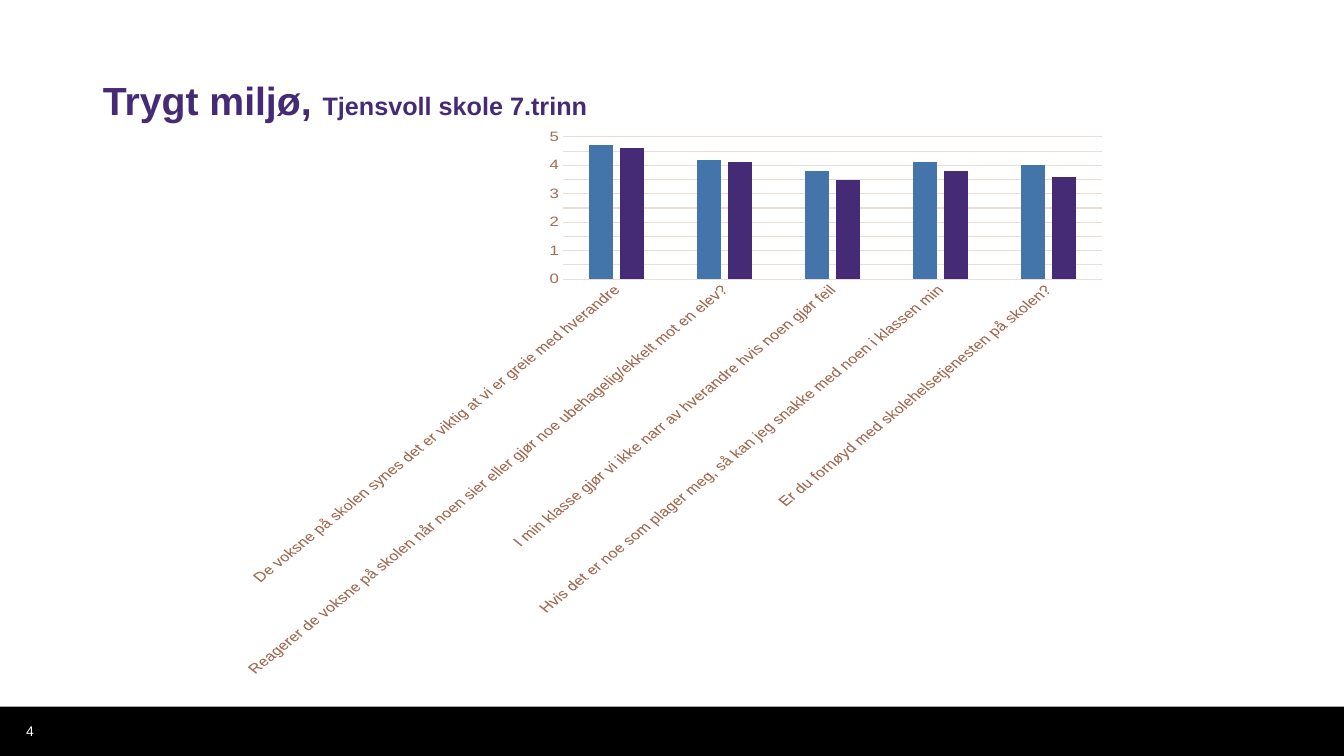
from dataclasses import dataclass

from pptx import Presentation
from pptx.chart.data import CategoryChartData
from pptx.dml.color import RGBColor
from pptx.enum.chart import XL_CHART_TYPE, XL_TICK_MARK
from pptx.enum.shapes import MSO_SHAPE
from pptx.enum.text import MSO_ANCHOR, MSO_AUTO_SIZE, PP_ALIGN
from pptx.util import Inches, Pt


@dataclass(frozen=True)
class Theme:
    font: str = "Arial"
    purple: str = "452B75"
    blue: str = "4375AA"
    brown: str = "A26D52"
    grid: str = "EADDD6"
    black: str = "000000"
    white: str = "FFFFFF"
    title: int = 28
    subtitle: int = 18
    label: int = 12
    small: int = 10


THEME = Theme()

QUESTIONS = [
    "De voksne på skolen synes det er viktig at vi er greie med hverandre",
    "Reagerer de voksne på skolen når noen sier eller gjør noe ubehagelig/ekkelt mot en elev?",
    "I min klasse gjør vi ikke narr av hverandre hvis noen gjør feil",
    "Hvis det er noe som plager meg, så kan jeg snakke med noen i klassen min",
    "Er du fornøyd med skolehelsetjenesten på skolen?",
]
SERIES = [
    ("Series 1", [4.7, 4.2, 3.8, 4.1, 4], THEME.blue),
    ("Series 2", [4.6, 4.1, 3.5, 3.8, 3.6], THEME.purple),
]


def style(font, size, color, bold=False):
    font.name = THEME.font
    font.size = Pt(size)
    font.bold = bold
    font.color.rgb = RGBColor.from_string(color)


def place(shape, left, top, width, height):
    shape.left, shape.top = Inches(left), Inches(top)
    shape.width, shape.height = Inches(width), Inches(height)


def add_title(slide, main, sub):
    title = slide.shapes.title
    place(title, 0.92, 0.54, 11.5, 0.74)
    frame = title.text_frame
    frame.word_wrap = True
    frame.auto_size = MSO_AUTO_SIZE.NONE
    frame.vertical_anchor = MSO_ANCHOR.BOTTOM
    para = frame.paragraphs[0]
    para.alignment = PP_ALIGN.LEFT
    para.line_spacing = 0.9
    for text, size in ((main, THEME.title), (sub, THEME.subtitle)):
        run = para.add_run()
        run.text = text
        style(run.font, size, THEME.purple, bold=True)


def add_footer(slide, number):
    band = slide.shapes.add_shape(
        MSO_SHAPE.RECTANGLE, 0, Inches(7.01), Inches(13.33), Inches(0.49))
    band.shadow.inherit = False
    band.fill.solid()
    band.fill.fore_color.rgb = RGBColor.from_string(THEME.black)
    band.line.fill.background()
    box = slide.shapes.add_textbox(
        Inches(0.16), Inches(7.05), Inches(0.52), Inches(0.4))
    frame = box.text_frame
    frame.word_wrap = True
    frame.vertical_anchor = MSO_ANCHOR.MIDDLE
    frame.text = number
    style(frame.paragraphs[0].runs[0].font, THEME.small, THEME.white)


def format_line(line):
    line.color.rgb = RGBColor.from_string(THEME.grid)
    line.width = Pt(0.75)


def format_axes(chart):
    cat, val = chart.category_axis, chart.value_axis
    for axis in (cat, val):
        axis.major_tick_mark = axis.minor_tick_mark = XL_TICK_MARK.NONE
        style(axis.tick_labels.font, THEME.label, THEME.brown)
    format_line(cat.format.line)
    for body in cat._element.xpath("c:txPr/a:bodyPr"):
        body.set("rot", str(-45 * 60000))
        body.set("vert", "horz")
    val.minimum_scale, val.maximum_scale = 0, 5
    val.major_unit = 0.5
    val.tick_labels.number_format = "General"
    val.tick_labels.number_format_is_linked = False
    val.format.line.fill.background()
    format_line(val.major_gridlines.format.line)


def add_columns(slide):
    data = CategoryChartData()
    data.categories = QUESTIONS
    for name, values, _ in SERIES:
        data.add_series(name, values)
    chart = slide.shapes.add_chart(
        XL_CHART_TYPE.COLUMN_CLUSTERED, Inches(2.22), Inches(1.27),
        Inches(8.89), Inches(5.44), data).chart
    chart.has_legend = chart.has_title = False
    style(chart.font, THEME.small, THEME.brown)
    plot = chart.plots[0]
    plot.vary_by_categories = False
    plot.gap_width, plot.overlap = 219, -27
    for series, (_, _, color) in zip(plot.series, SERIES):
        series.format.fill.solid()
        series.format.fill.fore_color.rgb = RGBColor.from_string(color)
    format_axes(chart)


def main():
    deck = Presentation()
    deck.slide_width, deck.slide_height = Inches(13.33), Inches(7.5)
    slide = deck.slides.add_slide(deck.slide_layouts.get_by_name("Title Only"))
    add_footer(slide, "4")
    add_title(slide, "Trygt miljø, ", "Tjensvoll skole 7.trinn")
    add_columns(slide)
    deck.save("out.pptx")


if __name__ == "__main__":
    main()
